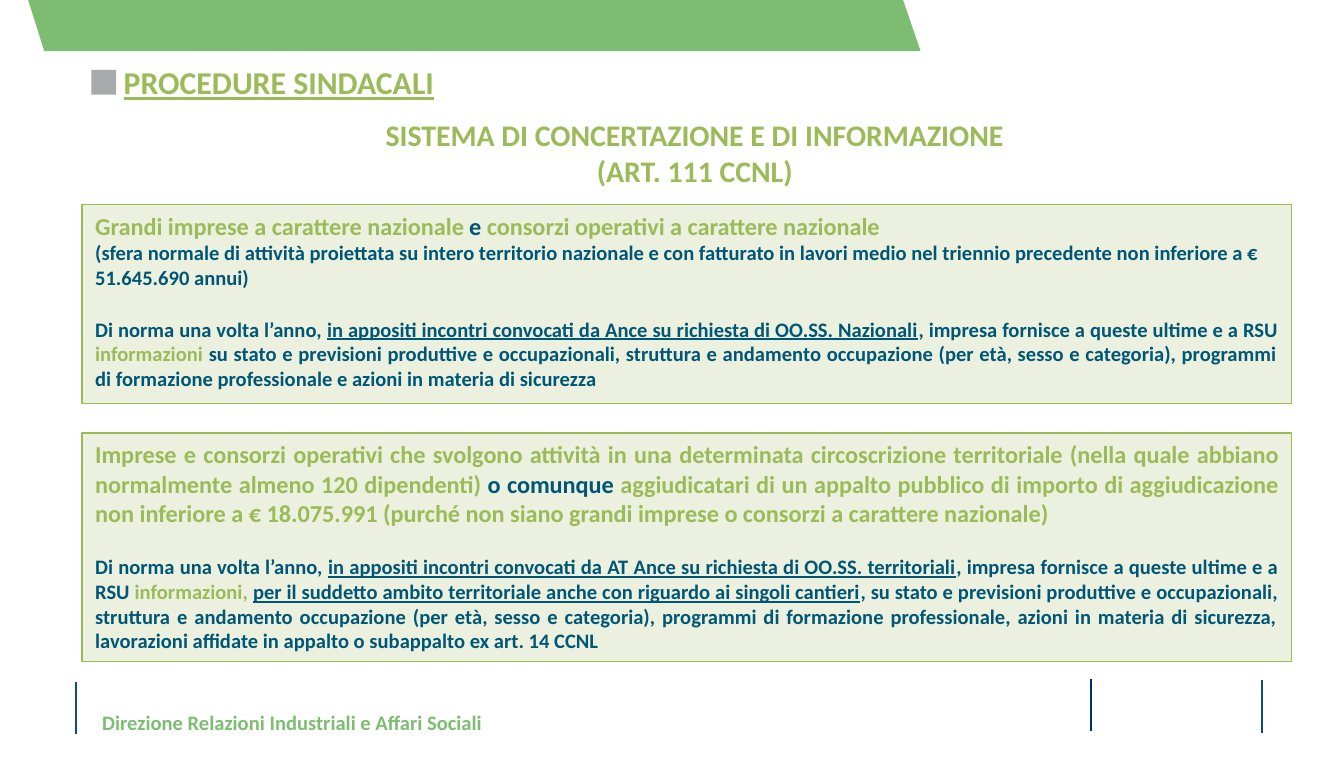
from typing import NamedTuple

from lxml.etree import SubElement
from pptx import Presentation
from pptx.dml.color import RGBColor
from pptx.enum.shapes import MSO_CONNECTOR as Link, MSO_SHAPE as Kind
from pptx.enum.text import MSO_ANCHOR as Anchor, PP_ALIGN as Align
from pptx.oxml.ns import qn
from pptx.util import Inches, Pt

CELL = Inches(0.1)  # the slide is a grid of 100 columns by 56.3 rows
COLS, ROWS = 100, 56.3
OLIVE, GREEN, TEAL = "9BBB59", "7DBD71", "005677"
PALE, GREY, NAVY, BLUE = "EBF1DE", "939598", "002E6E", "11498A"


class Area(NamedTuple):
    col: float
    row: float
    wide: float
    high: float


class Bit(NamedTuple):
    text: str
    color: str = TEAL
    under: bool = False


class Para(NamedTuple):
    bits: list[Bit]
    size: float
    align: Align = Align.LEFT
    before: float = 0


class Panel(NamedTuple):
    area: Area
    paras: list[Para]


class Rule(NamedTuple):
    col: float
    row: float
    color: str
    width: float


GAP = 14.6
RULE_HIGH = 3.9
RULES = [
    Rule(5.65, 50.7, BLUE, 1),
    Rule(93.9, 50.6, BLUE, 1),
    Rule(81.15, 50.5, NAVY, 1.2),
]

LABELS = [
    Panel(Area(9.2, 4.7, 84.9, 2.9),
          [Para([Bit("PROCEDURE SINDACALI", OLIVE, True)], 17)]),
    Panel(Area(7.6, 52.8, 44.1, 1.9),
          [Para([Bit("Direzione Relazioni Industriali e Affari Sociali", GREEN)], 11)]),
    Panel(Area(6.7, 8.7, 90, 5.4),
          [Para([Bit("SISTEMA DI CONCERTAZIONE E DI INFORMAZIONE\n(ART. 111 CCNL)", OLIVE)],
                16, Align.CENTER)]),
]

PANELS = [
    Panel(Area(6.1, 15.2, 90, 14.8), [
        Para([
            Bit("Grandi imprese a carattere nazionale ", OLIVE),
            Bit("e "),
            Bit("consorzi operativi a carattere nazionale", OLIVE),
        ], 13),
        Para([Bit("(sfera normale di attività proiettata su intero territorio nazionale e con "
                  "fatturato in lavori medio nel triennio precedente non inferiore a € "
                  "51.645.690 annui)")], 11),
        Para([
            Bit("Di norma una volta l’anno, "),
            Bit("in appositi incontri convocati da Ance su richiesta di OO.SS. Nazionali",
                under=True),
            Bit(", impresa fornisce a queste ultime e a RSU "),
            Bit("informazioni", OLIVE),
            Bit(" su stato e previsioni produttive e occupazionali, struttura e andamento "
                "occupazione (per età, sesso e categoria), programmi di formazione "
                "professionale e azioni in materia di sicurezza"),
        ], 11, Align.JUSTIFY, GAP),
    ]),
    Panel(Area(6.1, 32.2, 90, 17), [
        Para([
            Bit("Imprese e consorzi operativi che svolgono attività in una determinata "
                "circoscrizione territoriale (nella quale abbiano normalmente almeno 120 "
                "dipendenti) ", OLIVE),
            Bit("o comunque "),
            Bit("aggiudicatari di un appalto pubblico di importo di aggiudicazione non "
                "inferiore a € 18.075.991 (purché non siano grandi imprese o consorzi a "
                "carattere nazionale)", OLIVE),
        ], 13, Align.JUSTIFY),
        Para([
            Bit("Di norma una volta l’anno, "),
            Bit("in appositi incontri convocati da AT Ance su richiesta di OO.SS. territoriali",
                under=True),
            Bit(", impresa fornisce a queste ultime e a RSU "),
            Bit("informazioni, ", OLIVE),
            Bit("per il suddetto ambito territoriale anche con riguardo ai singoli cantieri",
                under=True),
            Bit(", su stato e previsioni produttive e occupazionali, struttura e andamento "
                "occupazione (per età, sesso e categoria), programmi di formazione "
                "professionale, azioni in materia di sicurezza, lavorazioni affidate in "
                "appalto o subappalto ex art. 14 CCNL"),
        ], 11, Align.JUSTIFY, GAP),
    ]),
]


def grid(*cells: float) -> list[int]:
    return [round(n * CELL) for n in cells]


def paint(target, color: str) -> None:
    """Give a fill or a line one plain colour."""
    fill = getattr(target, "fill", target)
    fill.solid()
    fill.fore_color.rgb = RGBColor.from_string(color)


def write(frame, paras: list[Para]) -> None:
    frame.word_wrap = True
    frame.vertical_anchor = Anchor.TOP
    for i, para in enumerate(paras):
        line = frame.add_paragraph() if i else frame.paragraphs[0]
        line.alignment = para.align
        line.space_before = Pt(para.before)
        line.font.name, line.font.size, line.font.bold = "Calibri", Pt(para.size), True
        for bit in para.bits:
            for j, part in enumerate(bit.text.split("\n")):
                if j:
                    line.add_line_break()
                run = line.add_run()
                run.text = part
                run.font.underline = bit.under
                paint(run.font, bit.color)


def label(shapes, item: Panel) -> None:
    frame = shapes.add_textbox(*grid(*item.area)).text_frame
    frame.margin_left = frame.margin_right = frame.margin_top = frame.margin_bottom = 0
    write(frame, item.paras)


def block(shapes, area: Area, color: str):
    shape = shapes.add_shape(Kind.RECTANGLE, *grid(*area))
    shape.shadow.inherit = False
    paint(shape.fill, color)
    shape.line.fill.background()
    return shape


def panel(shapes, item: Panel) -> None:
    shape = block(shapes, item.area, PALE)
    paint(shape.line, OLIVE)
    shape.line.width = Pt(0.75)
    write(shape.text_frame, item.paras)


def rule(shapes, item: Rule) -> None:
    ends = grid(item.col, item.row, item.col, item.row + RULE_HIGH)
    line = shapes.add_connector(Link.STRAIGHT, *ends)
    paint(line.line, item.color)
    line.line.width = Pt(item.width)
    SubElement(line._element.spPr, qn("a:effectLst"))


def banner(shapes) -> None:
    path = shapes.build_freeform(*grid(2.1, 0), scale=1.0)
    path.add_line_segments([grid(*p) for p in [(3.3, 3.8), (68.5, 3.8), (67.2, 0)]])
    shape = path.convert_to_shape()
    shape.shadow.inherit = False
    paint(shape.fill, GREEN)
    shape.line.fill.background()


def marker(shapes) -> None:
    shape = block(shapes, Area(6.8, 5.2, 1.85, 1.85), GREY)
    tint = shape.fill._xPr.find(qn("a:solidFill"))[0]
    SubElement(tint, qn("a:alpha"), val="80000")


def main() -> None:
    deck = Presentation()
    deck.slide_width, deck.slide_height = grid(COLS, ROWS)
    shapes = deck.slides.add_slide(deck.slide_layouts[6]).shapes
    for item in RULES:
        rule(shapes, item)
    marker(shapes)
    banner(shapes)
    for item in LABELS:
        label(shapes, item)
    for item in PANELS:
        panel(shapes, item)
    deck.save("out.pptx")


if __name__ == "__main__":
    main()
